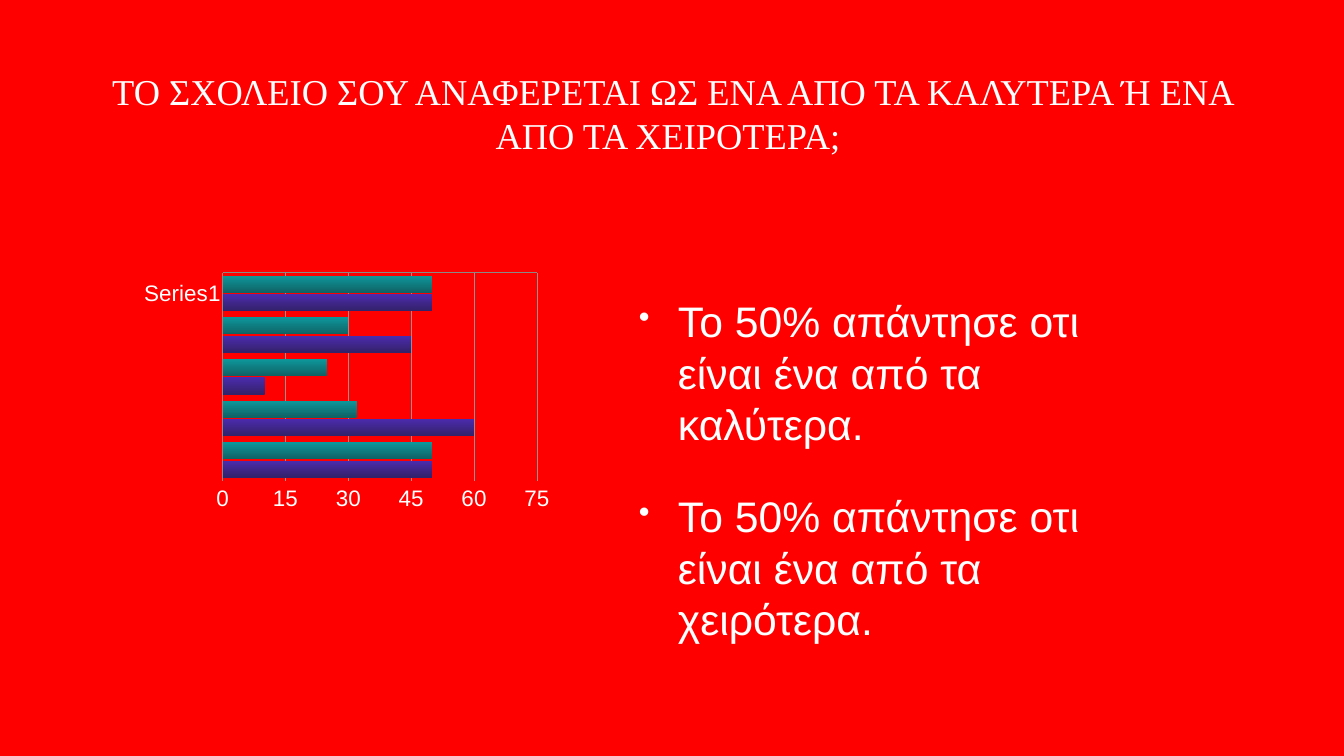
from lxml import etree
from pptx import Presentation
from pptx import util as u
from pptx.chart.data import CategoryChartData
from pptx.dml.color import RGBColor
from pptx.enum import chart as ch, text
from pptx.oxml import parse_xml
from pptx.oxml.ns import nsdecls, qn

# Content
TITLE = "ΤΟ ΣΧΟΛΕΙΟ ΣΟΥ ΑΝΑΦΕΡΕΤΑΙ ΩΣ ΕΝΑ ΑΠΟ ΤΑ ΚΑΛΥΤΕΡΑ Ή ΕΝΑ ΑΠΟ ΤΑ ΧΕΙΡΟΤΕΡΑ; "
ANSWERS = [
    "Το 50% απάντησε οτι είναι ένα από τα καλύτερα.",
    "Το 50% απάντησε οτι είναι ένα από τα χειρότερα.",
]
CATEGORIES = ["Series1", "", "", "", ""]
SERIES = [  # name, values, gradient from top to bottom
    ("Series 1", (), ("0065C1", "094593")),
    ("Series 2", (), ("1F8D0E", "1A610F")),
    ("Series 3", (50, 30, 25, 32, 50), ("0E979B", "0F6366")),
    ("Series 4", (50, 45, 10, 60, 50), ("4B2BAE", "34226B")),
]

# Layout in px: left, top, width, height
SLIDE = (1344, 756)
TITLE_BOX = (99, 31, 1147, 164)
ANSWER_BOX = (636, 226, 533, 487)
CHART_BOX = (82, 245, 469, 306)
PLOT = {"x": 0.3, "y": 0.09, "w": 0.67, "h": 0.68}
INSET, INDENT = 3, 39
WHITE, RED, AXIS, GRID = "FFFFFF", "FF0000", "8A8B89", "929292"


def px(value):
    return round(value * 914400 / 50.4)


def color(value):
    return RGBColor.from_string(value)


def set_font(font, name, size):
    font.name, font.size = name, u.Pt(size)
    font.color.rgb = color(WHITE)


def set_line(line, value):
    line.color.rgb, line.width = color(value), u.Pt(1)


def add_text(slide, box, lines, name, size):
    frame = slide.shapes.add_textbox(*map(px, box)).text_frame
    frame.word_wrap = True
    frame.vertical_anchor = text.MSO_ANCHOR.MIDDLE
    frame.margin_left = frame.margin_right = px(INSET)
    frame.margin_top = frame.margin_bottom = px(INSET)
    frame.text = "\n".join(lines)
    for paragraph in frame.paragraphs:
        set_font(paragraph.font, name, size)
    return frame.paragraphs


def add_bullet(paragraph):
    properties = paragraph._p.get_or_add_pPr()
    properties.set("marL", str(px(INDENT)))
    properties.set("indent", str(-px(INDENT)))
    bullet = [parse_xml(f'<a:buSzPct {nsdecls("a")} val="75000"/>'),
              parse_xml(f'<a:buChar {nsdecls("a")} char="•"/>')]
    for element in bullet:
        properties.insert_element_before(element, "a:tabLst", "a:defRPr", "a:extLst")


def add_bar_chart(slide):
    data = CategoryChartData()
    data.categories = CATEGORIES
    for name, values, _ in SERIES:
        data.add_series(name, values)
    chart = slide.shapes.add_chart(
        ch.XL_CHART_TYPE.BAR_CLUSTERED, *map(px, CHART_BOX), data).chart
    chart.has_legend = chart.has_title = False
    set_font(chart.font, "Arial", 32)

    # Bars
    plot = chart.plots[0]
    plot.gap_width, plot.overlap, plot.vary_by_categories = 40, -10, False
    for series, (_, _, shades) in zip(plot.series, SERIES):
        fill = series.format.fill
        fill.gradient()
        fill.gradient_angle = 270
        for stop, shade in zip(fill.gradient_stops, shades):
            stop.color.rgb = color(shade)

    # Axes: first category on top, value labels at the bottom
    for axis in (chart.category_axis, chart.value_axis):
        axis.major_tick_mark = axis.minor_tick_mark = ch.XL_TICK_MARK.NONE
        set_line(axis.format.line, AXIS)
    chart.category_axis.reverse_order = True
    values = chart.value_axis
    values.minimum_scale, values.maximum_scale, values.major_unit = 0, 75, 15
    values.tick_label_position = ch.XL_TICK_LABEL_POSITION.HIGH
    values.has_major_gridlines = True
    set_line(values.major_gridlines.format.line, GRID)

    # Fixed inner plot area
    plot_area = chart._chartSpace.chart.plotArea
    for old in plot_area.findall(qn("c:layout")):
        plot_area.remove(old)
    layout = etree.Element(qn("c:layout"))
    manual = etree.SubElement(layout, qn("c:manualLayout"))
    settings = {"layoutTarget": "inner", "xMode": "edge", "yMode": "edge", **PLOT}
    for key, value in settings.items():
        etree.SubElement(manual, qn(f"c:{key}")).set("val", str(value))
    plot_area.insert(0, layout)


def main():
    presentation = Presentation()
    presentation.slide_width, presentation.slide_height = map(px, SLIDE)
    slide = presentation.slides.add_slide(presentation.slide_layouts[6])
    slide.background.fill.solid()
    slide.background.fill.fore_color.rgb = color(RED)

    # Title
    title = add_text(slide, TITLE_BOX, [TITLE], "Times New Roman", 52)
    title[0].alignment = text.PP_ALIGN.CENTER

    # Answers
    for index, paragraph in enumerate(add_text(slide, ANSWER_BOX, ANSWERS, "Arial", 61)):
        add_bullet(paragraph)
        paragraph.space_before = u.Pt(59 if index else 0)

    add_bar_chart(slide)
    presentation.save("out.pptx")


if __name__ == "__main__":
    main()
